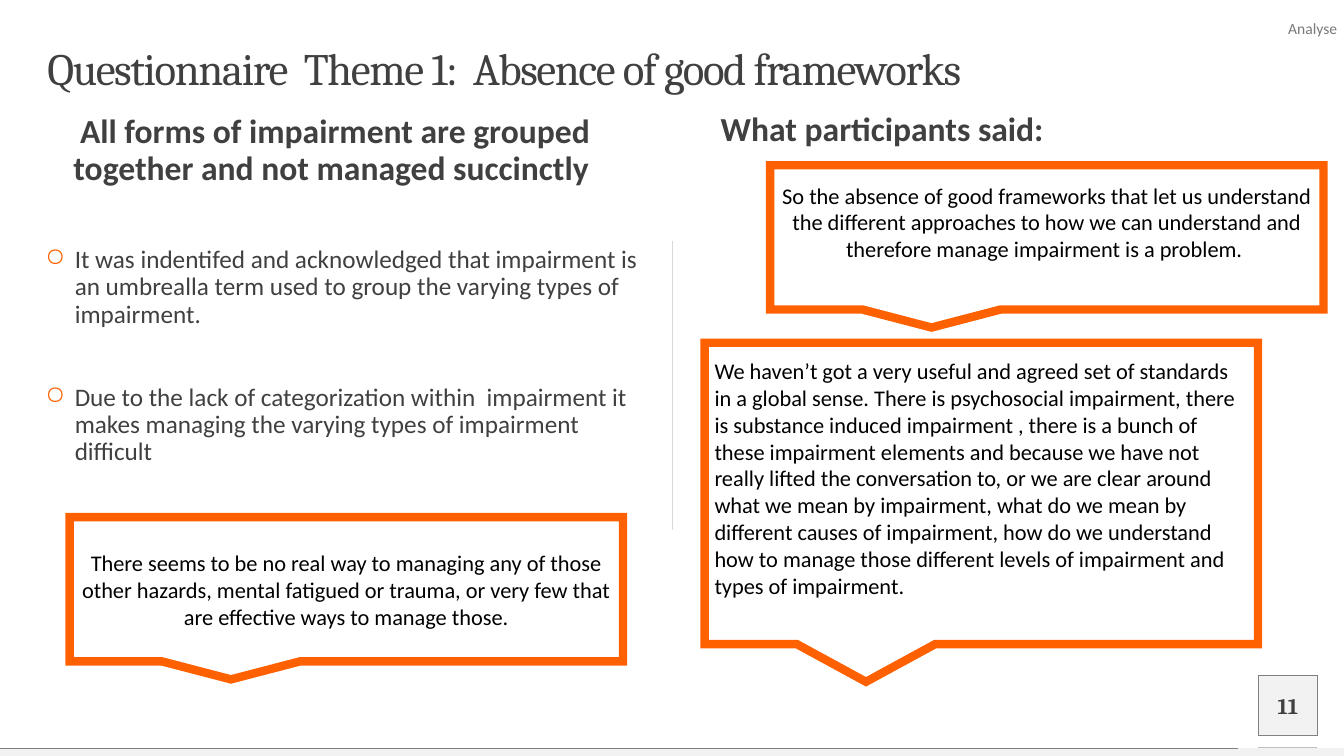
from dataclasses import dataclass

from lxml.etree import SubElement
from pptx import Presentation
from pptx.dml.color import RGBColor
from pptx.enum.shapes import MSO_CONNECTOR, MSO_SHAPE
from pptx.enum.text import MSO_ANCHOR, PP_ALIGN
from pptx.oxml.ns import qn
from pptx.util import Pt


@dataclass(frozen=True)
class Theme:
    accent: str = "FF6100"
    ink: str = "404040"
    black: str = "000000"
    muted: str = "797979"
    white: str = "FFFFFF"
    panel: str = "F2F2F2"
    outline: str = "808080"
    footer: str = "BFBFBF"
    divider: str = "D9D9D9"
    heading_font: str = "Cambria"
    body_font: str = "Calibri"
    title_size: float = 32
    heading_size: float = 24
    bullet_size: float = 18
    quote_size: float = 16
    label_size: float = 11.1


THEME = Theme()
CALLOUT_WIDTH = 395.3
BULLET_INDENT = 21


def color(value):
    return RGBColor.from_string(value)


def write_text(shape, *texts, size, font=THEME.body_font, ink=THEME.ink, bold=False,
               align=PP_ALIGN.LEFT, anchor=MSO_ANCHOR.TOP, insets=(0, 0, 0, 0),
               line_spacing=1.0, gap=0, tracking=0, bullet=None, wrap=True):
    """Fill a shape with one paragraph per text."""
    frame = shape.text_frame
    frame.word_wrap = wrap
    frame.vertical_anchor = anchor
    (frame.margin_left, frame.margin_top,
     frame.margin_right, frame.margin_bottom) = map(Pt, insets)
    for index, text in enumerate(texts):
        para = frame.add_paragraph() if index else frame.paragraphs[0]
        para.alignment = align
        para.line_spacing = line_spacing
        para.space_before = Pt(gap if index else 0)
        if bullet:
            add_bullet(para, bullet)
        span = para.add_run()
        span.text = text
        span.font.size = Pt(size)
        span.font.name = font
        span.font.bold = bold
        span.font.color.rgb = color(ink)
        if tracking:
            span.font._element.set("spc", str(int(tracking * 100)))


def add_bullet(para, character):
    properties = para._p.get_or_add_pPr()
    properties.set("marL", str(Pt(BULLET_INDENT)))
    properties.set("indent", str(-Pt(BULLET_INDENT)))
    bullet_color = SubElement(properties, qn("a:buClr"))
    SubElement(bullet_color, qn("a:srgbClr"), val=THEME.accent)
    SubElement(properties, qn("a:buChar"), char=character)


def add_text(page, left, top, width, height, *texts, **text_format):
    box = page.shapes.add_textbox(Pt(left), Pt(top), Pt(width), Pt(height))
    write_text(box, *texts, **text_format)


def add_panel(page, kind, left, top, width, height, fill, line=None, weight=0.25):
    panel = page.shapes.add_shape(kind, Pt(left), Pt(top), Pt(width), Pt(height))
    panel.shadow.inherit = False
    panel.fill.solid()
    panel.fill.fore_color.rgb = color(fill)
    if line:
        panel.line.color.rgb = color(line)
        panel.line.width = Pt(weight)
        SubElement(panel.line._get_or_add_ln(), qn("a:miter"), lim="800000")
    else:
        panel.line.fill.background()
    return panel


def add_line(page, x1, y1, x2, y2, ink):
    line = page.shapes.add_connector(MSO_CONNECTOR.STRAIGHT, Pt(x1), Pt(y1), Pt(x2), Pt(y2))
    line.line.color.rgb = color(ink)
    line.line.width = Pt(0.5)
    SubElement(line._element.spPr, qn("a:effectLst"))


def add_quote(page, left, top, height, text, align=PP_ALIGN.CENTER, bottom=3.6):
    callout = add_panel(page, MSO_SHAPE.RECTANGULAR_CALLOUT, left, top, CALLOUT_WIDTH, height,
                        THEME.white, THEME.accent, 6)
    write_text(callout, text, size=THEME.quote_size, ink=THEME.black, align=align,
               anchor=MSO_ANCHOR.MIDDLE, insets=(7.2, 3.6, 7.2, bottom))


def add_heading(page, left, top, width, text, align=PP_ALIGN.LEFT):
    add_text(page, left, top, width, 79.2, text, size=THEME.heading_size, bold=True,
             align=align, line_spacing=0.9)


def main():
    deck = Presentation()
    deck.slide_width, deck.slide_height = Pt(960), Pt(540)
    page = deck.slides.add_slide(deck.slide_layouts[6])

    # Footer, page number and column divider
    add_panel(page, MSO_SHAPE.RECTANGLE, 898.6, 482.4, 42.5, 42.5, THEME.panel, THEME.outline)
    add_panel(page, MSO_SHAPE.RECTANGLE, 0, 534.2, 960, 5.8, THEME.panel)
    add_line(page, 898.6, 533.5, 941, 533.5, THEME.footer)
    add_line(page, 0, 534.2, 884.2, 534.2, THEME.outline)
    add_line(page, 480.2, 172.1, 480.2, 378.7, THEME.divider)
    add_text(page, 898.6, 489.6, 42.5, 28.8, "11", size=THEME.quote_size,
             font=THEME.heading_font, bold=True, align=PP_ALIGN.CENTER,
             anchor=MSO_ANCHOR.MIDDLE)

    # Title and section label
    add_text(page, 33.8, 33.8, 892.8, 33.8, "Questionnaire  Theme 1:  Absence of good frameworks",
             size=THEME.title_size, font=THEME.heading_font, anchor=MSO_ANCHOR.MIDDLE,
             line_spacing=0.9, tracking=-1)
    add_text(page, 913, 13.7, 54.7, 17.3, "Analyse", size=THEME.label_size, ink=THEME.muted,
             line_spacing=0.7, insets=(7.2, 3.6, 7.2, 3.6), wrap=False)

    # Findings
    add_heading(page, 33.8, 82.1, 411.1,
                "All forms of impairment are grouped together and not managed succinctly ",
                align=PP_ALIGN.CENTER)
    add_text(page, 32.4, 176.4, 430.6, 151.2,
             "It was indentifed and acknowledged that impairment is an umbrealla term used to "
             "group the varying types of impairment.",
             "Due to the lack of categorization within  impairment it makes managing the varying "
             "types of impairment difficult",
             size=THEME.bullet_size, line_spacing=0.9, gap=40, bullet="○")

    # Participant quotes
    add_heading(page, 514.8, 80.6, 430.6, "What participants said:")
    add_quote(page, 550.1, 118.1, 103,
              "So the absence of good frameworks that let us understand the different approaches "
              "to how we can understand and therefore manage impairment is a problem. ",
              bottom=25.6)
    add_quote(page, 503.3, 244.8, 215.3,
              "We haven’t got a very useful and agreed set of standards in a global sense. There "
              "is psychosocial impairment, there is substance induced impairment , there is a "
              "bunch of these impairment elements and because we have not really lifted the "
              "conversation to, or we are clear around what we mean by impairment, what do we "
              "mean by different causes of impairment, how do we understand how to manage those "
              "different levels of impairment and types of impairment.",
              align=PP_ALIGN.LEFT, bottom=25.6)
    add_quote(page, 49.7, 369.4, 103,
              "There seems to be no real way to managing any of those other hazards, mental "
              "fatigued or trauma, or very few that are effective ways to manage those.")

    deck.save("out.pptx")


if __name__ == "__main__":
    main()
